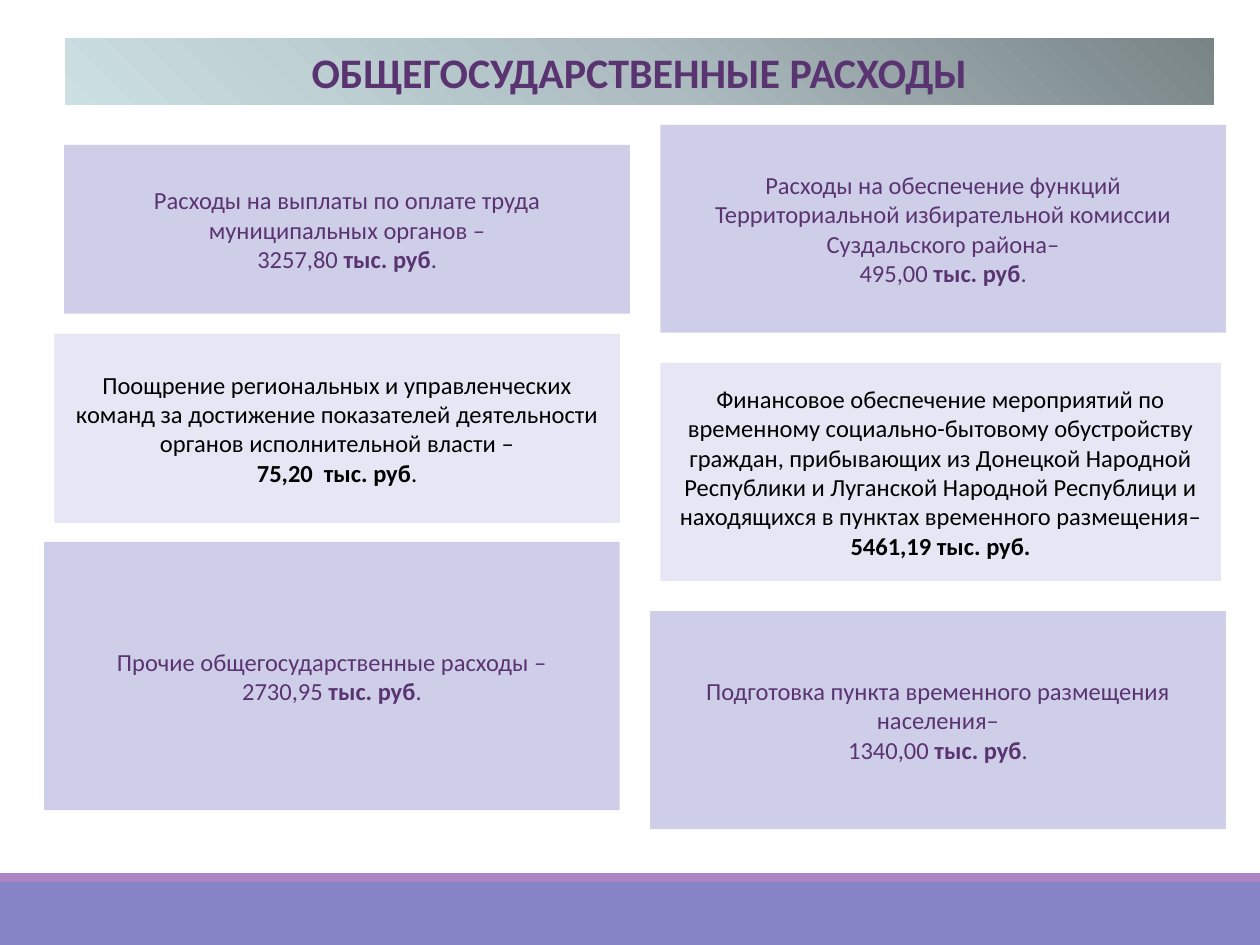
from dataclasses import dataclass

from lxml import etree
from pptx import Presentation
from pptx.dml.color import RGBColor
from pptx.enum.shapes import MSO_SHAPE
from pptx.enum.text import MSO_ANCHOR, MSO_AUTO_SIZE, PP_ALIGN
from pptx.oxml.ns import qn
from pptx.util import Pt

RECTANGLE = MSO_SHAPE.RECTANGLE
MIDDLE = MSO_ANCHOR.MIDDLE
CENTER = PP_ALIGN.CENTER
NO_AUTOFIT = MSO_AUTO_SIZE.NONE
TITLE_ONLY = 5


@dataclass(frozen=True)
class Theme:
    font: str = "Calibri"
    title_size: int = 24
    body_size: int = 14
    accent: str = "5A3471"
    black: str = "000000"
    white: str = "FFFFFF"
    card: str = "CFCEE9"
    pale_card: str = "E7E6F4"
    footer: str = "8784C7"
    footer_edge: str = "AD84C6"
    title_stops: tuple = ((0, "798487"), (50, "ACBCC0"), (100, "CCDFE3"))
    title_angle: int = 135


THEME = Theme()
UNIT = " тыс. руб"

# Box (left, top, width, height), pale style, purpose, amount as (text, bold) runs
CARDS = [
    ((36.7, 82.8, 323.3, 96.5), False,
     "Расходы на выплаты по оплате труда муниципальных органов –",
     [("3257,80", False), (UNIT, True), (".", False)]),
    ((31, 190.8, 323.3, 108), True,
     "Поощрение региональных и управленческих команд за достижение показателей "
     "деятельности органов исполнительной власти –",
     [("75,20 " + UNIT, True), (".", False)]),
    ((377.3, 207.4, 320.4, 124.6), True,
     "Финансовое обеспечение мероприятий по временному социально-бытовому "
     "обустройству граждан, прибывающих из Донецкой Народной Республики и "
     "Луганской Народной Республици и находящихся в пунктах временного размещения–",
     [("5461,19" + UNIT + ".", True)]),
    ((377.3, 71.3, 323.3, 118.8), False,
     "Расходы на обеспечение функций Территориальной избирательной комиссии "
     "Суздальского района–",
     [("495,00", False), (UNIT, True), (".", False)]),
    ((25.2, 309.6, 329, 153.4), False,
     "Прочие общегосударственные расходы –",
     [("2730,95", False), (UNIT, True), (".", False)]),
    ((371.5, 349.2, 329, 124.6), False,
     "Подготовка пункта временного размещения населения–",
     [("1340,00", False), (UNIT, True), (".", False)]),
]


def format_run(run, size, color, bold):
    run.font.name = THEME.font
    run.font.size = Pt(size)
    run.font.bold = bold
    run.font.color.rgb = RGBColor.from_string(color)


def add_block(slide, box, color):
    """Add a plain filled rectangle without outline or shadow."""
    shape = slide.shapes.add_shape(RECTANGLE, *map(Pt, box))
    shape.shadow.inherit = False
    shape.fill.solid()
    shape.fill.fore_color.rgb = RGBColor.from_string(color)
    shape.line.fill.background()
    return shape


def add_card(slide, box, pale, purpose, amount):
    shape = add_block(slide, box, THEME.pale_card if pale else THEME.card)
    text_color = THEME.black if pale else THEME.accent
    text_frame = shape.text_frame
    text_frame.word_wrap = True
    text_frame.vertical_anchor = MIDDLE
    paragraph = text_frame.paragraphs[0]
    for runs in ([(purpose, False)], amount):
        paragraph.alignment = CENTER
        for text, bold in runs:
            run = paragraph.add_run()
            run.text = text
            format_run(run, THEME.body_size, text_color, bold)
        if runs is not amount:
            paragraph = text_frame.add_paragraph()


def style_title_panel(title):
    """Give the title placeholder rounded corners and a three-stop gradient."""
    properties = title._element.spPr
    geometry = etree.SubElement(properties, qn("a:prstGeom"), prst="roundRect")
    etree.SubElement(geometry, qn("a:avLst"))
    gradient = etree.SubElement(properties, qn("a:gradFill"), rotWithShape="1")
    stops = etree.SubElement(gradient, qn("a:gsLst"))
    for position, color in THEME.title_stops:
        stop = etree.SubElement(stops, qn("a:gs"), pos=str(position * 1000))
        etree.SubElement(stop, qn("a:srgbClr"), val=color)
    etree.SubElement(gradient, qn("a:lin"), ang=str(THEME.title_angle * 60000), scaled="0")
    title.line.color.rgb = RGBColor.from_string(THEME.white)
    title.line.width = Pt(1.25)


def set_title(slide, text):
    title = slide.shapes.title
    title.left, title.top, title.width, title.height = map(Pt, (36.7, 20.9, 657.4, 39.6))
    style_title_panel(title)
    text_frame = title.text_frame
    text_frame.text = text
    text_frame.auto_size = NO_AUTOFIT
    text_frame.word_wrap = True
    text_frame.vertical_anchor = MIDDLE
    paragraph = text_frame.paragraphs[0]
    paragraph.alignment = CENTER
    format_run(paragraph.runs[0], THEME.title_size, THEME.accent, True)


def main():
    presentation = Presentation()
    presentation.slide_width, presentation.slide_height = Pt(720), Pt(540)
    slide = presentation.slides.add_slide(presentation.slide_layouts[TITLE_ONLY])
    add_block(slide, (0, 504, 720, 36), THEME.footer)
    add_block(slide, (0, 499, 720, 5), THEME.footer_edge)
    set_title(slide, "ОБЩЕГОСУДАРСТВЕННЫЕ РАСХОДЫ")
    for card in CARDS:
        add_card(slide, *card)
    presentation.save("out.pptx")


if __name__ == "__main__":
    main()
